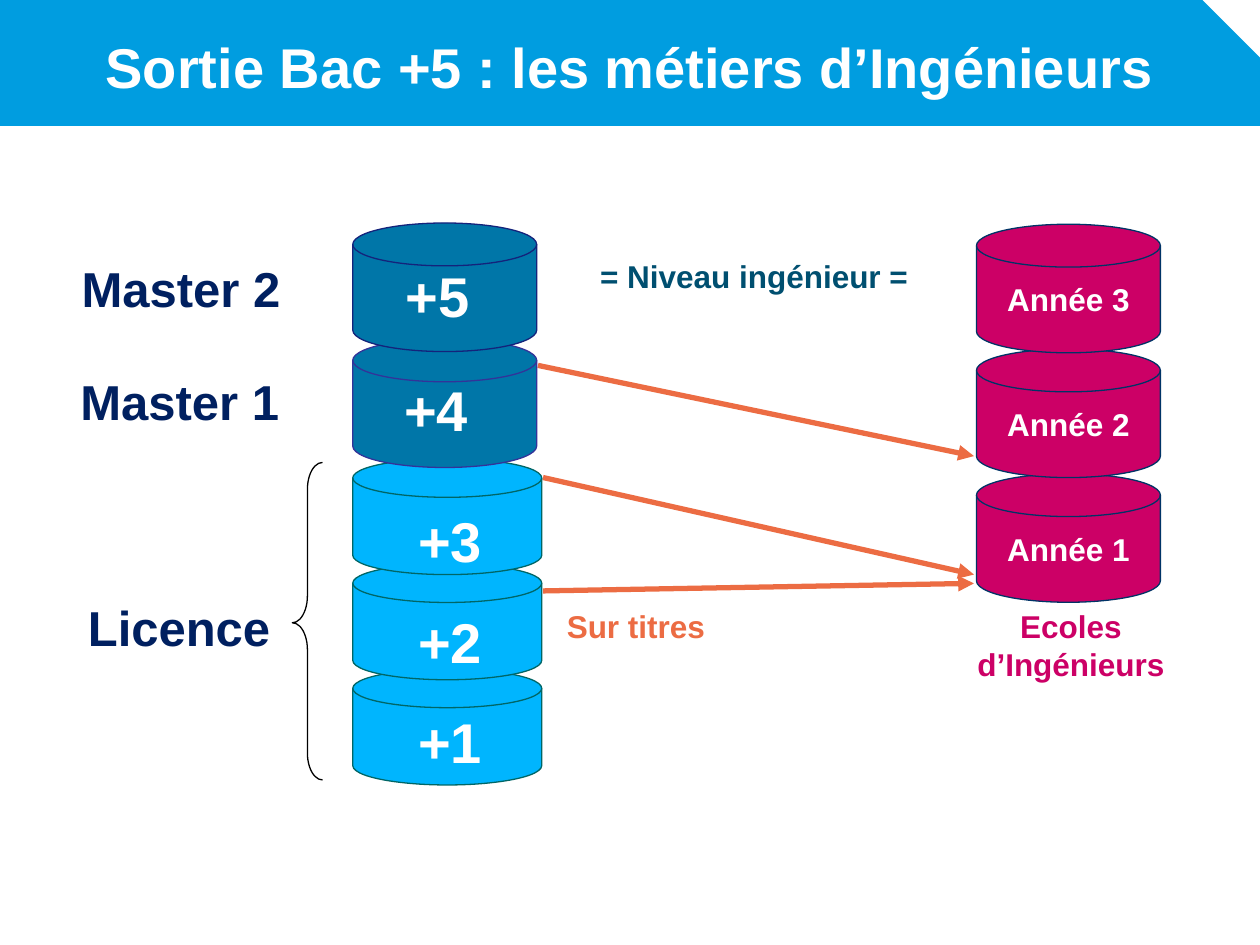
from pptx import Presentation
from pptx.dml.color import RGBColor
from pptx.enum.shapes import MSO_CONNECTOR, MSO_SHAPE as SHAPE
from pptx.enum.text import MSO_ANCHOR as ANCHOR, MSO_AUTO_SIZE as FIT, PP_ALIGN as ALIGN
from pptx.oxml.ns import qn
from pptx.util import Inches, Pt
from lxml import etree

BANNER, NAVY, TEAL, WHITE = "009DE0", "002060", "004F70", "FFFFFF"
MASTER, LICENCE, SCHOOL, ORANGE = "0076A8", "00B5FE", "CC0066", "EC6C43"


def color(hex_value):
    return RGBColor.from_string(hex_value)


def write(tf, text, size, hex_value, align=ALIGN.LEFT, spacing=None):
    for i, line in enumerate(text.split("\n")):
        p = tf.paragraphs[0] if i == 0 else tf.add_paragraph()
        p.alignment = align
        p.line_spacing = spacing
        r = p.add_run()
        r.text = line
        style = {"name": "Arial", "size": Pt(size), "bold": True}
        for key, value in style.items():
            setattr(r.font, key, value)
        r.font.color.rgb = color(hex_value)


def add_label(s, box, text, size, hex_value, wrap=False, **layout):
    tf = s.shapes.add_textbox(*map(Inches, box)).text_frame
    tf.word_wrap = wrap
    tf.auto_size = FIT.SHAPE_TO_FIT_TEXT
    write(tf, text, size, hex_value, **layout)


def add_shape(s, kind, box, fill=None, line=None):
    sp = s.shapes.add_shape(kind, *map(Inches, box))
    sp.shadow.inherit = False
    if fill:
        sp.fill.solid()
        sp.fill.fore_color.rgb = color(fill)
    else:
        sp.fill.background()
    if line:
        sp.line.color.rgb = color(line)
        sp.line.width = Pt(0.75)
    else:
        sp.line.fill.background()
    return sp


def add_disk(s, box, fill, line):
    return add_shape(s, SHAPE.FLOWCHART_MAGNETIC_DISK, box, fill, line)


def add_arrow(s, start, end):
    cx = s.shapes.add_connector(MSO_CONNECTOR.STRAIGHT, *map(Inches, start + end))
    cx.line.color.rgb = color(ORANGE)
    cx.line.width = Pt(3)
    etree.SubElement(cx.line._get_or_add_ln(), qn("a:tailEnd"), type="triangle")
    etree.SubElement(cx._element.spPr, qn("a:effectLst"))


def add_title(s, left, top, width, height):
    banner = add_shape(s, SHAPE.SNIP_1_RECTANGLE, (left, top, width, height), BANNER)
    banner.adjustments[0] = 0.458
    add_label(s, (left, top + 0.21, width, 0.64),
              "Sortie Bac +5 : les métiers d’Ingénieurs", 32, WHITE,
              wrap=True, align=ALIGN.CENTER)


def add_paths(s):
    """Arrows from the university years to the school years."""
    for start, end in [((4.31, 4.69), (7.73, 4.63)),
                       ((4.31, 3.79), (7.73, 4.56)),
                       ((4.27, 2.9), (7.73, 3.62))]:
        add_arrow(s, start, end)
    add_label(s, (4.4, 4.77, 1.31, 0.4), "Sur titres", 18, ORANGE)
    add_label(s, (4.21, 1.99, 3.55, 0.4), "= Niveau ingénieur =", 18, TEAL,
              wrap=True, align=ALIGN.CENTER)


def add_school(s, left, top, width, height):
    """Three school years, stacked from the bottom up."""
    disk_height = 1.02
    step = (height - disk_height) / 2
    for year in (1, 2, 3):
        disk = add_disk(s, (left, top + (3 - year) * step, width, disk_height),
                        SCHOOL, "003366")
        tf = disk.text_frame
        tf.word_wrap = False
        tf.vertical_anchor = ANCHOR.MIDDLE
        write(tf, f"Année {year}", 18, WHITE, ALIGN.CENTER)
    add_label(s, (left - 0.1, top + height - 0.01, 1.7, 0.71),
              "Ecoles\nd’Ingénieurs", 18, SCHOOL, align=ALIGN.CENTER)


def add_licence(s, left, top, width, height):
    """Three licence years with their brace."""
    disk_height = 0.92
    step = (height - disk_height) / 2
    for i in (2, 1, 0):
        add_disk(s, (left, top + i * step, width, disk_height), LICENCE, "006666")
    for i in range(3):
        add_label(s, (left + 0.42, top + 0.33 + i * 0.8, 0.71, 0.64),
                  f"+{3 - i}", 32, WHITE)
    brace = add_shape(s, SHAPE.LEFT_BRACE, (left - 0.48, top + 0.03, 0.24, 2.52),
                      line="000000")
    brace.adjustments[0], brace.adjustments[1] = 0.889, 0.505
    add_label(s, (left - 2.2, top + 1.05, 1.67, 0.57), "Licence", 28, NAVY)


def add_master(s, left, top, width, height):
    """Two master years, the second on top of the first."""
    disk_height = 1.02
    step = height - disk_height
    for year, line, dx, dy in [(1, "333399", 0.31, 0.24), (2, "14237B", 0.32, 0.26)]:
        y = top + (2 - year) * step
        add_disk(s, (left, y, width, disk_height), MASTER, line)
        add_label(s, (left + dx, y + dy, 0.71, 0.64), f"+{year + 3}", 32, WHITE)
    add_label(s, (left - 2.25, top + 0.34, 1.91, 0.45), "Master 2", 28, NAVY,
              spacing=0.75)
    add_label(s, (left - 2.26, top + 1.13, 1.8, 0.57), "Master 1", 28, NAVY)


def main():
    prs = Presentation()
    prs.slide_width, prs.slide_height = Inches(10), Inches(7.5)
    s = prs.slides.add_slide(prs.slide_layouts[6])
    add_title(s, 0, 0, 10, 1)
    add_paths(s)
    add_school(s, 7.75, 1.78, 1.46, 3)
    add_licence(s, 2.8, 3.64, 1.5, 2.59)
    add_master(s, 2.8, 1.77, 1.46, 1.94)
    prs.save("out.pptx")


if __name__ == "__main__":
    main()
